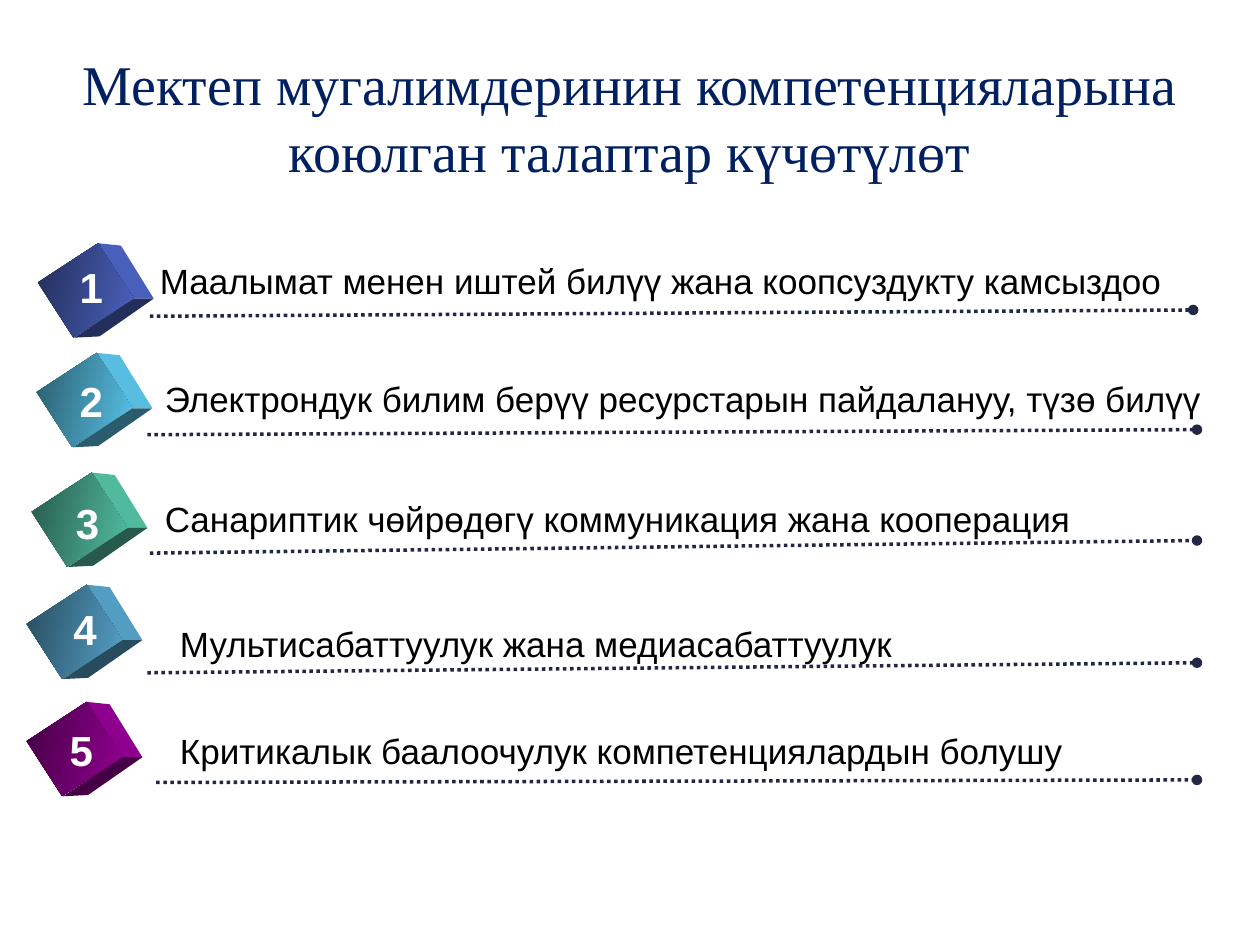
from lxml import etree
from pptx import Presentation
from pptx.dml.color import RGBColor
from pptx.enum.dml import MSO_LINE
from pptx.enum.shapes import MSO_CONNECTOR, MSO_SHAPE
from pptx.enum.text import MSO_ANCHOR, MSO_AUTO_SIZE, PP_ALIGN
from pptx.oxml.ns import qn
from pptx.util import Inches, Pt

RECT = MSO_SHAPE.RECTANGLE
STRAIGHT = MSO_CONNECTOR.STRAIGHT
DOTS = MSO_LINE.ROUND_DOT
LEFT, CENTER = PP_ALIGN.LEFT, PP_ALIGN.CENTER
MIDDLE = MSO_ANCHOR.MIDDLE
FIT = MSO_AUTO_SIZE.SHAPE_TO_FIT_TEXT

COLORS = {"title": "002060", "text": "000000", "number": "FFFFFF", "rule": "212745"}
TITLE = "Мектеп мугалимдеринин компетенцияларына коюлган талаптар күчөтүлөт"

# label, label box, cube corner, number corner, rule start, rule end, cube color
ROWS = [
    ("Маалымат менен иштей билүү жана коопсуздукту камсыздоо",
     (1.17, 2.01, 8.2), (0.42, 2.02), (0.53, 2.03), (1.19, 2.51), (9.47, 2.46), "4E67C8"),
    ("Электрондук билим берүү ресурстарын пайдалануу, түзө билүү",
     (1.21, 2.95, 8.43), (0.41, 2.89), (0.53, 2.93), (1.17, 3.45), (9.5, 3.41), "5ECCF3"),
    ("Санариптик чөйрөдөгү коммуникация жана кооперация",
     (1.21, 3.9, 7.44), (0.37, 3.84), (0.5, 3.9), (1.19, 4.39), (9.5, 4.29), "56C7AA"),
    ("Мультисабаттуулук жана медиасабаттуулук",
     (1.33, 4.89, 5.89), (0.33, 4.73), (0.48, 4.74), (1.17, 5.34), (9.5, 5.26), "59A8D1"),
    ("Критикалык баалоочулук компетенциялардын болушу",
     (1.33, 5.74, 7.25), (0.33, 5.66), (0.45, 5.7), (1.24, 6.21), (9.5, 6.19), "990099"),
]
CUBE_W, CUBE_H, TURN = 0.52, 0.57, 57
# Side faces as offsets from the cube corner, with their shade
FACES = [
    ([(0.35, -0.09), (0.54, -0.07), (0.8, 0.35), (0.64, 0.35)], 0.93),
    ([(0.17, 0.66), (0.37, 0.65), (0.8, 0.35), (0.64, 0.35)], 0.45),
]


def shade(color, part):
    """Darken a hex color to the given part of its brightness."""
    return RGBColor(*(round(v * part) for v in RGBColor.from_string(color)))


def write(frame, text, size=20, font="Arial", color="text", bold=False, align=LEFT):
    para = frame.paragraphs[0]
    para.alignment = align
    run = para.add_run()
    run.text = text
    run.font.size = Pt(size)
    run.font.name = font
    run.font.bold = bold
    run.font.color.rgb = RGBColor.from_string(COLORS[color])


def add_text(shapes, box, text, **style):
    frame = shapes.add_textbox(*map(Inches, box)).text_frame
    frame.word_wrap = False
    frame.auto_size = FIT
    write(frame, text, **style)


def add_rule(shapes, start, end):
    rule = shapes.add_connector(STRAIGHT, *map(Inches, start + end))
    rule.line.color.rgb = RGBColor.from_string(COLORS["rule"])
    rule.line.width = Pt(2)
    rule.line.dash_style = DOTS
    etree.SubElement(rule.line._get_or_add_ln(), qn("a:tailEnd"), type="oval")
    etree.SubElement(rule._element.spPr, qn("a:effectLst"))


def add_cube(shapes, left, top, color):
    for points, part in FACES:
        spots = [(Inches(left + x), Inches(top + y)) for x, y in points]
        pen = shapes.build_freeform(*spots[0])
        pen.add_line_segments(spots[1:], close=True)
        face = pen.convert_to_shape()
        face.shadow.inherit = False
        face.fill.solid()
        face.fill.fore_color.rgb = shade(color, part)
        face.line.fill.background()
    front = shapes.add_shape(RECT, *map(Inches, (left, top, CUBE_W, CUBE_H)))
    front.rotation = TURN
    front.shadow.inherit = False
    front.line.fill.background()
    front.fill.gradient()
    front.fill.gradient_angle = 45
    for stop, part in zip(front.fill.gradient_stops, (0.45, 0.95)):
        stop.color.rgb = shade(color, part)


def main():
    deck = Presentation()
    deck.slide_width, deck.slide_height = Inches(10), Inches(7.5)
    slide = deck.slides.add_slide(deck.slide_layouts[5])
    shapes = slide.shapes

    title = shapes.title
    title.left, title.top, title.width, title.height = map(Inches, (0.5, 0.3, 9, 1.25))
    title.text_frame.vertical_anchor = MIDDLE
    write(title.text_frame, TITLE, size=32, font="Times New Roman",
          color="title", align=CENTER)

    for number, (label, box, cube, spot, start, end, color) in enumerate(ROWS, 1):
        add_rule(shapes, start, end)
        add_cube(shapes, *cube, color)
        add_text(shapes, spot + (0.39, 0.5), str(number), size=24,
                 color="number", bold=True, align=CENTER)
        add_text(shapes, box + (0.44,), label)

    deck.save("out.pptx")


if __name__ == "__main__":
    main()
